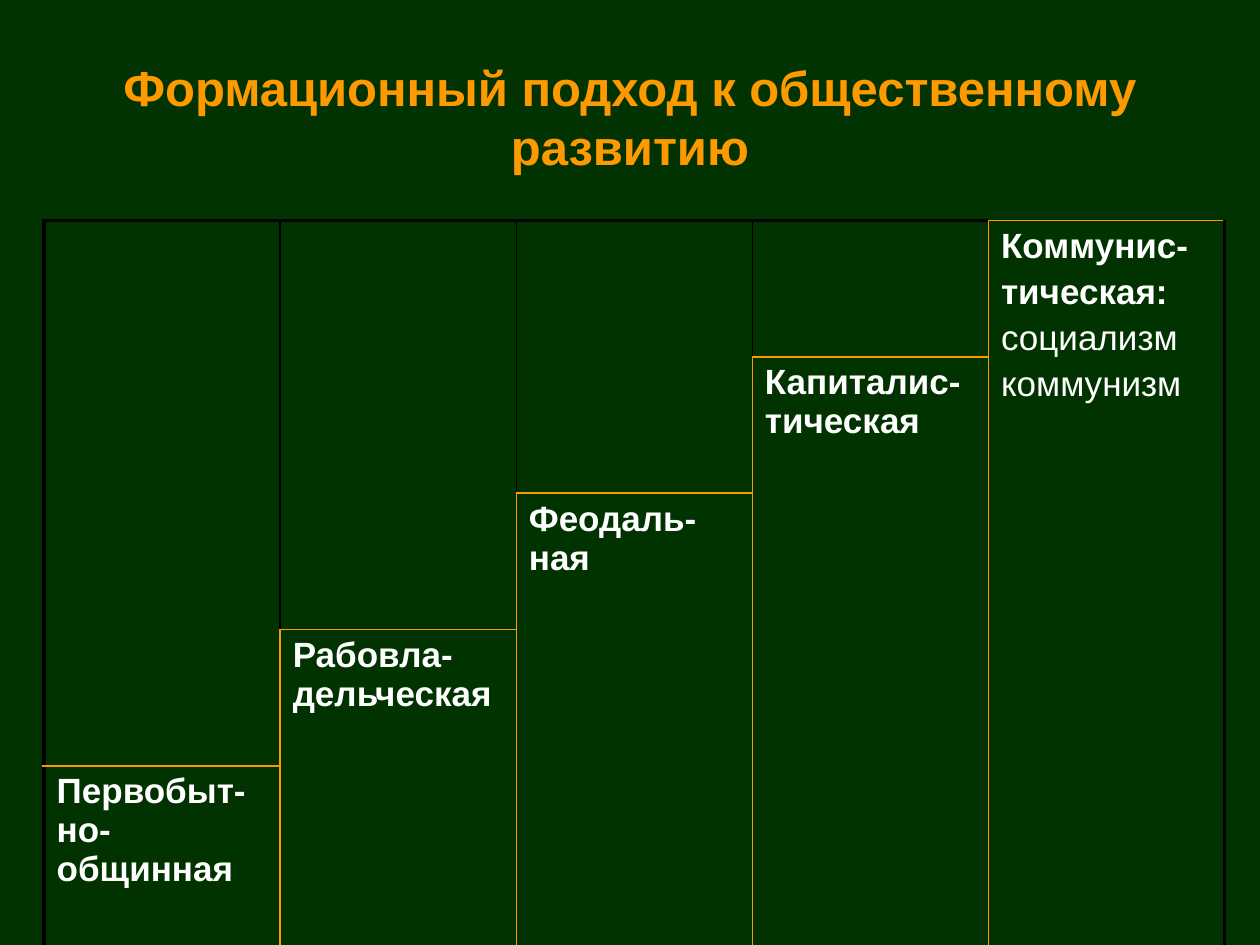
"""Build a slide with the staircase table of social formations."""
from dataclasses import dataclass

from lxml import etree
from pptx import Presentation
from pptx import util as u
from pptx.dml import color
from pptx.enum import text
from pptx.oxml import ns


@dataclass(frozen=True)
class Theme:
    font: str = "Arial"
    background: str = "003300"
    accent: str = "FF9900"
    body: str = "FFFFFF"
    grid: str = "000000"
    title_size: int = 28
    body_size: int = 20
    thin: float = 1
    thick: float = 2.25


theme = Theme()


def write_lines(frame, lines, size, ink, align=text.PP_ALIGN.LEFT, bold_lines=1, before=0, hanging=0):
    frame.word_wrap = True
    for index, line in enumerate(lines):
        para = frame.paragraphs[0] if index == 0 else frame.add_paragraph()
        para.alignment = align
        para.space_before = u.Pt(before)
        if hanging:
            properties = para._p.get_or_add_pPr()
            properties.set("marL", str(u.Inches(hanging)))
            properties.set("indent", str(u.Inches(-hanging)))
        span = para.add_run()
        span.text = line
        span.font.name = theme.font
        span.font.size = u.Pt(size)
        span.font.bold = index < bold_lines
        span.font.color.rgb = color.RGBColor.from_string(ink)


def draw_border(cell, side, ink, width):
    properties = cell._tc.get_or_add_tcPr()
    line = etree.SubElement(properties, ns.qn(f"a:ln{side}"), w=str(u.Pt(width)))
    fill = etree.SubElement(line, ns.qn("a:solidFill"))
    etree.SubElement(fill, ns.qn("a:srgbClr"), val=ink)


deck = Presentation()
deck.slide_width = u.Inches(10)
deck.slide_height = u.Inches(7.5)
slide = deck.slides.add_slide(deck.slide_layouts[6])
slide.background.fill.solid()
slide.background.fill.fore_color.rgb = color.RGBColor.from_string(theme.background)

title = slide.shapes.add_textbox(u.Inches(0.5), u.Inches(0.3), u.Inches(9), u.Inches(1.25))
title.text_frame.vertical_anchor = text.MSO_ANCHOR.MIDDLE
write_lines(title.text_frame, ["Формационный подход к общественному развитию"],
            theme.title_size, theme.accent, align=text.PP_ALIGN.CENTER)

formations = [
    ["Первобыт-но-общинная"],
    ["Рабовла-дельческая"],
    ["Феодаль-ная"],
    ["Капиталис-тическая"],
    ["Коммунис-", "тическая:", "социализм", "коммунизм"],
]
count = len(formations)
last = count - 1

stairs = slide.shapes.add_table(count, count, u.Inches(0.35), u.Inches(1.75),
                                u.Inches(9.37), u.Inches(5.41)).table
stairs.first_row = False
stairs.horz_banding = False

outer = (theme.grid, theme.thick)
inner = (theme.grid, theme.thin)
step = (theme.accent, theme.thin)

for column, lines in enumerate(formations):
    top = last - column
    for row in range(count):
        cell = stairs.cell(row, column)
        left = outer if column == 0 else step if row >= top else inner
        right = outer if column == last else step if row >= top - 1 else inner
        upper = step if row == top else outer if row == 0 else inner
        lower = outer if row == last else step if row == top - 1 else inner
        for side, border in zip("LRTB", (left, right, upper, lower)):
            draw_border(cell, side, *border)
        cell.fill.background()
    if top > 1:
        stairs.cell(0, column).merge(stairs.cell(top - 1, column))
    if top < last:
        stairs.cell(top, column).merge(stairs.cell(last, column))
    write_lines(stairs.cell(top, column).text_frame, lines, theme.body_size, theme.body,
                bold_lines=2, before=4, hanging=0.58 if len(lines) > 1 else 0)

deck.save("out.pptx")
